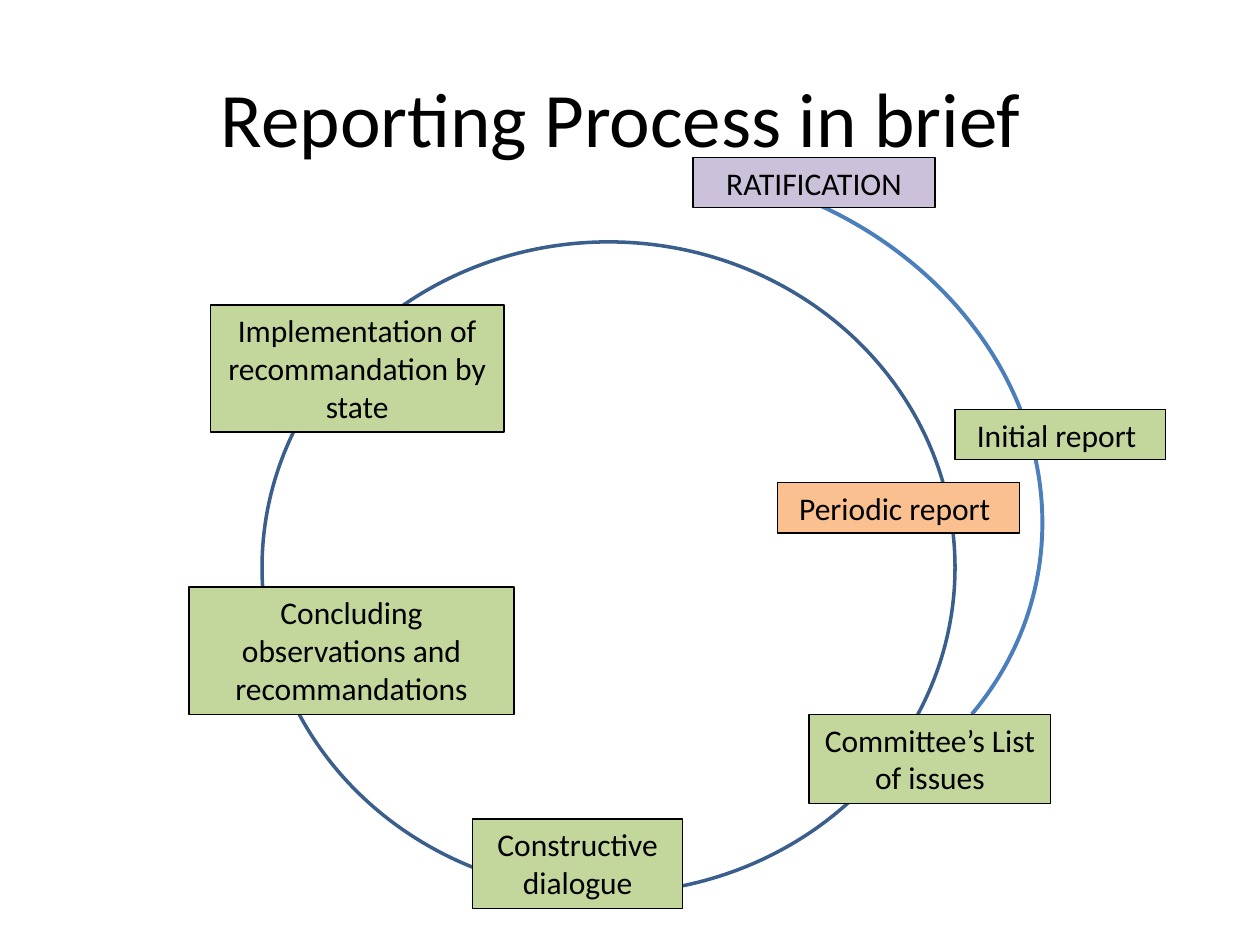
"""Build the slide on the reporting process as a cycle of labelled steps."""
import pptx
import pptx.dml.color
import pptx.enum.shapes
import pptx.enum.text
import pptx.util

Inches = pptx.util.Inches
Pt = pptx.util.Pt
RGBColor = pptx.dml.color.RGBColor
SHAPES = pptx.enum.shapes.MSO_SHAPE
TEXT = pptx.enum.text

COLOURS = {
    "ink": "000000",
    "cycle": "3A5F8C",
    "entry": "4B7EBC",
    "ratification": "CCC1DA",
    "step": "C3D69B",
    "periodic": "FAC090",
}


def add_outline(page, kind, bounds, colour, weight):
    """Add an unfilled shape with a coloured line."""
    shape = page.shapes.add_shape(kind, *map(Inches, bounds))
    shape.shadow.inherit = False
    shape.fill.background()
    shape.line.color.rgb = RGBColor.from_string(COLOURS[colour])
    shape.line.width = Pt(weight)
    return shape


def write_text(box, words, size, frame_format):
    """Write one centred paragraph into a box."""
    frame = box.text_frame
    for name, value in frame_format.items():
        setattr(frame, name, value)
    para = frame.paragraphs[0]
    para.alignment = TEXT.PP_ALIGN.CENTER
    span = para.add_run()
    span.text = words
    for name, value in {"name": "Calibri", "size": Pt(size)}.items():
        setattr(span.font, name, value)
    span.font.color.rgb = RGBColor.from_string(COLOURS["ink"])


deck = pptx.Presentation()
deck.slide_width = Inches(10)
deck.slide_height = Inches(7.5)
page = deck.slides.add_slide(deck.slide_layouts[6])

title_format = {
    "word_wrap": True,
    "auto_size": TEXT.MSO_AUTO_SIZE.NONE,
    "vertical_anchor": TEXT.MSO_ANCHOR.MIDDLE,
}
label_format = {
    "word_wrap": True,
    "auto_size": TEXT.MSO_AUTO_SIZE.SHAPE_TO_FIT_TEXT,
    "vertical_anchor": TEXT.MSO_ANCHOR.TOP,
}

title = page.shapes.add_textbox(Inches(0.5), Inches(0.3), Inches(9), Inches(1.25))
write_text(title, "Reporting Process in brief ", 44, title_format)

add_outline(page, SHAPES.OVAL, (2.08, 1.92, 5.5, 5.17), "cycle", 2)
entry_arc = add_outline(page, SHAPES.ARC, (2.15, 1.33, 6.14, 5.33), "entry", 2.25)
entry_arc.rotation = 12.1
entry_arc.adjustments[0] = 170.38
entry_arc.adjustments[1] = 13.06

line_heights = {1: 0.4, 2: 0.71, 3: 1.01}
steps = [
    ("RATIFICATION", 5.5, 1.25, 1.92, 1, "ratification"),
    ("Initial report ", 7.58, 3.25, 1.67, 1, "step"),
    ("Constructive dialogue", 3.75, 6.5, 1.67, 2, "step"),
    ("Periodic report ", 6.17, 3.83, 1.92, 1, "periodic"),
    ("Committee’s List of issues", 6.42, 5.67, 1.92, 2, "step"),
    ("Concluding observations and recommandations", 1.5, 4.66, 2.58, 3, "step"),
    ("Implementation of recommandation by state", 1.67, 2.42, 2.33, 3, "step"),
]
for words, left, top, width, lines, colour in steps:
    bounds = (left, top, width, line_heights[lines])
    label = add_outline(page, SHAPES.RECTANGLE, bounds, "ink", 0.75)
    label.fill.solid()
    label.fill.fore_color.rgb = RGBColor.from_string(COLOURS[colour])
    write_text(label, words, 18, label_format)

deck.save("out.pptx")
